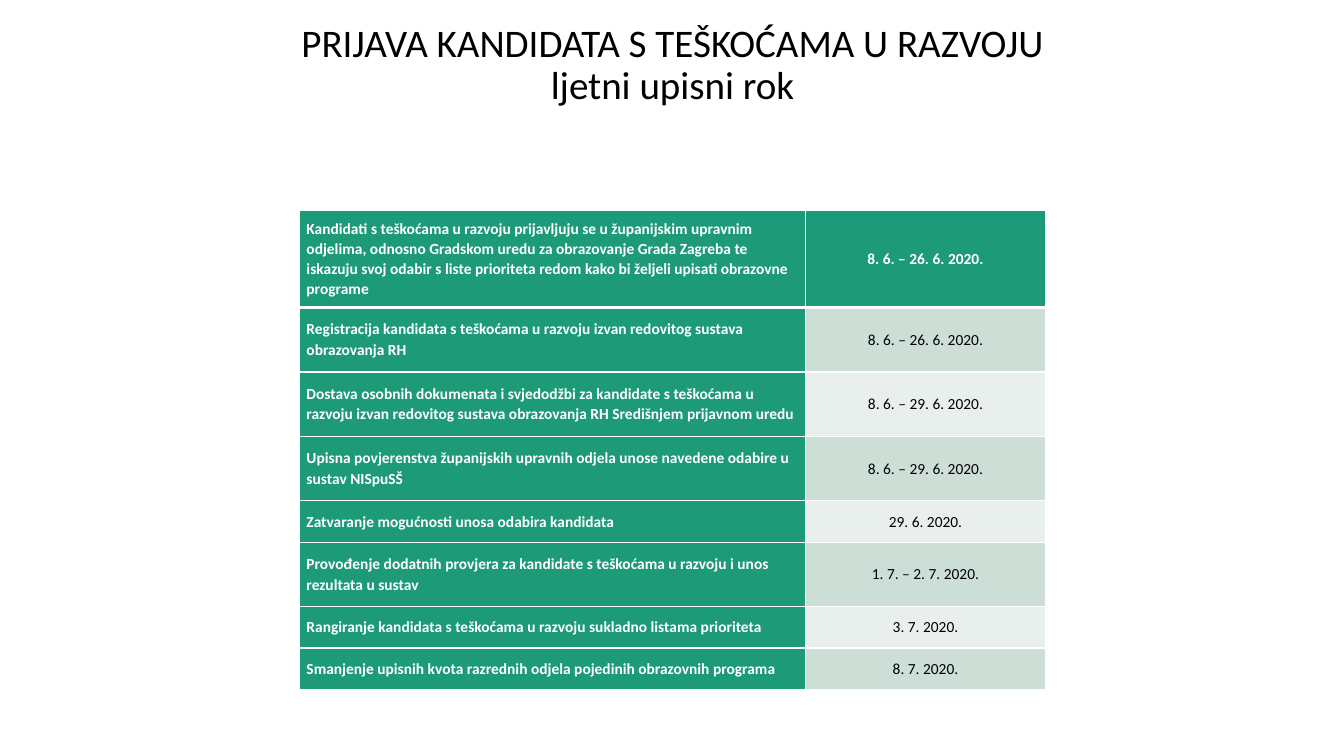
from lxml import etree
from pptx import Presentation
from pptx.dml.color import RGBColor
from pptx.enum.text import MSO_ANCHOR, PP_ALIGN
from pptx.oxml.ns import qn
from pptx.util import Inches, Pt

LEFT, CENTER = PP_ALIGN.LEFT, PP_ALIGN.CENTER
MIDDLE = MSO_ANCHOR.MIDDLE

COLORS = {
    "white": "FFFFFF",
    "black": "000000",
    "green": "1D9A78",
    "band_dark": "CDDED6",
    "band_light": "E8EFEC",
}

TITLE = ["PRIJAVA KANDIDATA S TEŠKOĆAMA U RAZVOJU", "ljetni upisni rok"]

# Step, date, row height
SCHEDULE = [
    ("Kandidati s teškoćama u razvoju prijavljuju se u županijskim upravnim odjelima, "
     "odnosno Gradskom uredu za obrazovanje Grada Zagreba te iskazuju svoj odabir s liste "
     "prioriteta redom kako bi željeli upisati obrazovne programe",
     "8. 6. – 26. 6. 2020.", 0.96),
    ("Registracija kandidata s teškoćama u razvoju izvan redovitog sustava obrazovanja RH",
     "8. 6. – 26. 6. 2020.", 0.64),
    ("Dostava osobnih dokumenata i svjedodžbi za kandidate s teškoćama u razvoju izvan "
     "redovitog sustava obrazovanja RH Središnjem prijavnom uredu",
     "8. 6. – 29. 6. 2020.", 0.64),
    ("Upisna povjerenstva županijskih upravnih odjela unose navedene odabire u sustav NISpuSŠ",
     "8. 6. – 29. 6. 2020.", 0.64),
    ("Zatvaranje mogućnosti unosa odabira kandidata", "29. 6. 2020.", 0.41),
    ("Provođenje dodatnih provjera za kandidate s teškoćama u razvoju i unos rezultata u sustav",
     "1. 7. – 2. 7. 2020.", 0.64),
    ("Rangiranje kandidata s teškoćama u razvoju sukladno listama prioriteta",
     "3. 7. 2020.", 0.41),
    ("Smanjenje upisnih kvota razrednih odjela pojedinih obrazovnih programa",
     "8. 7. 2020.", 0.41),
]


class SlideBuilder:
    font = "Calibri"

    def __init__(self, slide):
        self.slide = slide

    def run(self, p, text, size, color, bold=False):
        r = p.add_run()
        r.text = text
        r.font.name = self.font
        r.font.size = Pt(size)
        r.font.bold = bold
        r.font.color.rgb = RGBColor.from_string(COLORS[color])

    def title(self, lines, x, y, w, h, size):
        tf = self.slide.shapes.add_textbox(Inches(x), Inches(y), Inches(w), Inches(h)).text_frame
        tf.word_wrap = True
        tf.vertical_anchor = MIDDLE
        tf.margin_top = tf.margin_bottom = 0
        p = tf.paragraphs[0]
        p.alignment = CENTER
        p.line_spacing = 0.9
        for i, line in enumerate(lines):
            if i:
                p.add_line_break()
            self.run(p, line, size, "black")

    def borders(self, cell, top, bottom):
        tcPr = cell._tc.get_or_add_tcPr()
        widths = {"a:lnL": 1, "a:lnR": 1, "a:lnT": top, "a:lnB": bottom}
        for i, (tag, width) in enumerate(widths.items()):
            ln = etree.Element(qn(tag), w=str(Pt(width)))
            fill = etree.SubElement(ln, qn("a:solidFill"))
            etree.SubElement(fill, qn("a:srgbClr"), val=COLORS["white"])
            tcPr.insert(i, ln)

    def cell(self, cell, text, fill, color, bold, align):
        cell.fill.solid()
        cell.fill.fore_color.rgb = RGBColor.from_string(COLORS[fill])
        cell.vertical_anchor = MIDDLE
        cell.margin_left = cell.margin_right = cell.margin_top = Inches(0.07)
        cell.margin_bottom = Inches(0.08)
        p = cell.text_frame.paragraphs[0]
        p.alignment = align
        p.line_spacing = 1.07
        self.run(p, text, 11, color, bold)

    def schedule(self, rows, x, y, col_widths):
        heights = [height for _, _, height in rows]
        table = self.slide.shapes.add_table(
            len(rows), len(col_widths), Inches(x), Inches(y),
            Inches(sum(col_widths)), Inches(sum(heights))).table
        for column, width in zip(table.columns, col_widths):
            column.width = Inches(width)
        for i, (step, date, height) in enumerate(rows):
            table.rows[i].height = Inches(height)
            header = i == 0
            band = "green" if header else "band_dark" if i % 2 else "band_light"
            self.cell(table.cell(i, 0), step, "green", "white", True, LEFT)
            self.cell(table.cell(i, 1), date, band, "white" if header else "black",
                      header, CENTER)
            for j in range(len(col_widths)):
                self.borders(table.cell(i, j), 3 if i == 1 else 1, 3 if header else 1)


def main():
    prs = Presentation()
    prs.slide_width, prs.slide_height = Inches(13.33), Inches(7.5)
    s = SlideBuilder(prs.slides.add_slide(prs.slide_layouts[6]))

    # Heading
    s.title(TITLE, 0.92, 0.24, 11.5, 0.83, 27.9)

    # Enrolment calendar
    s.schedule(SCHEDULE, 2.97, 2.09, [5.02, 2.38])

    prs.save("out.pptx")


if __name__ == "__main__":
    main()
